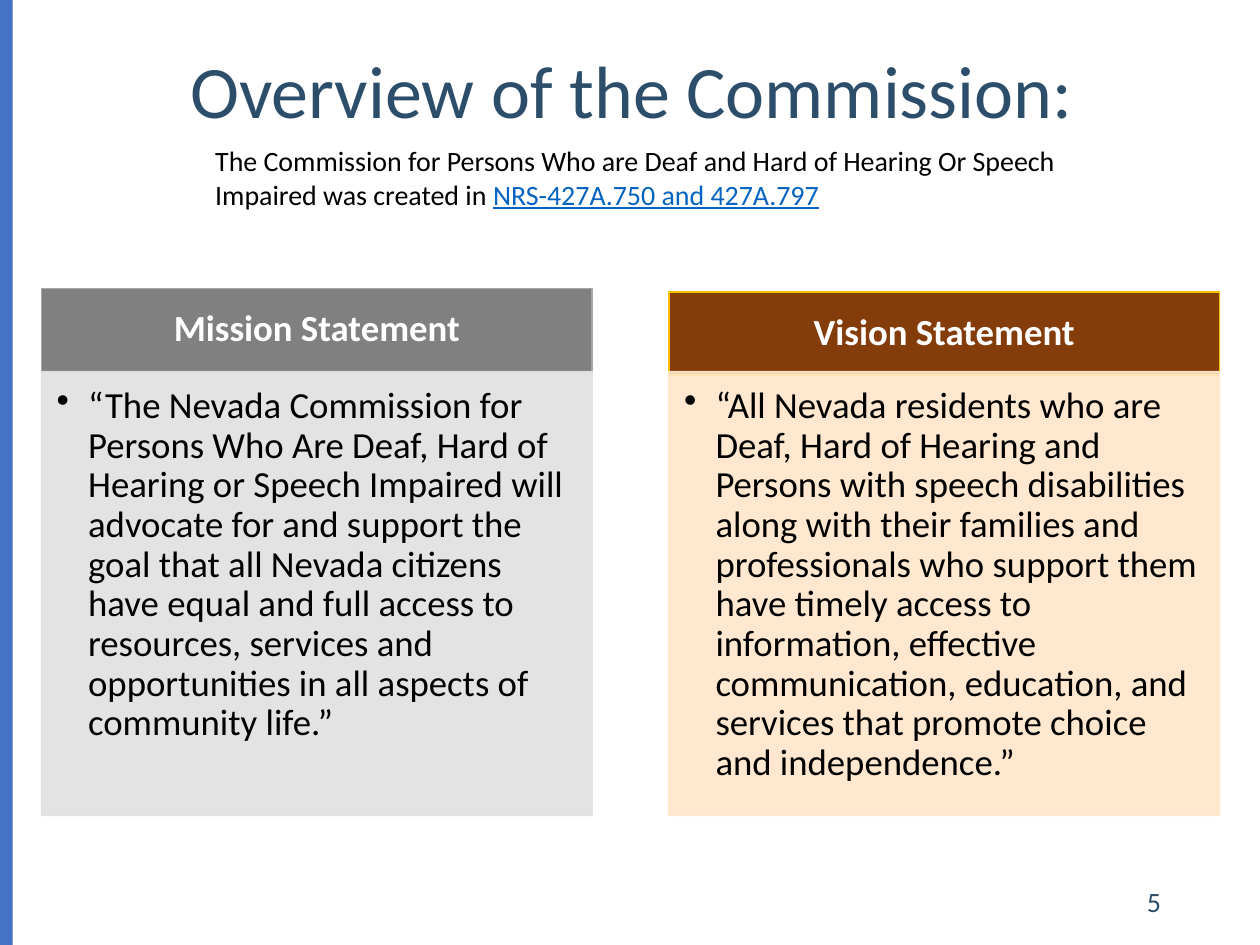
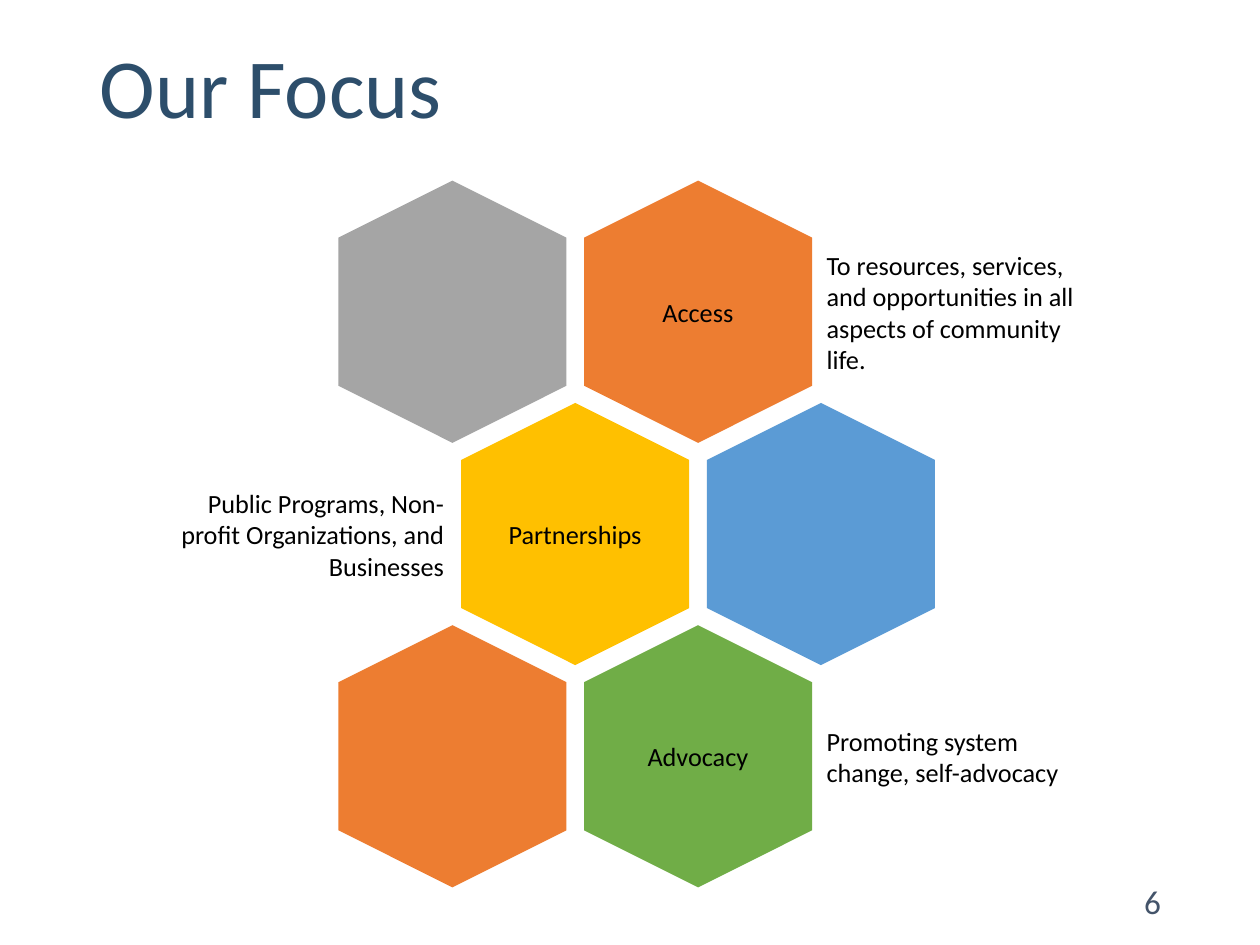
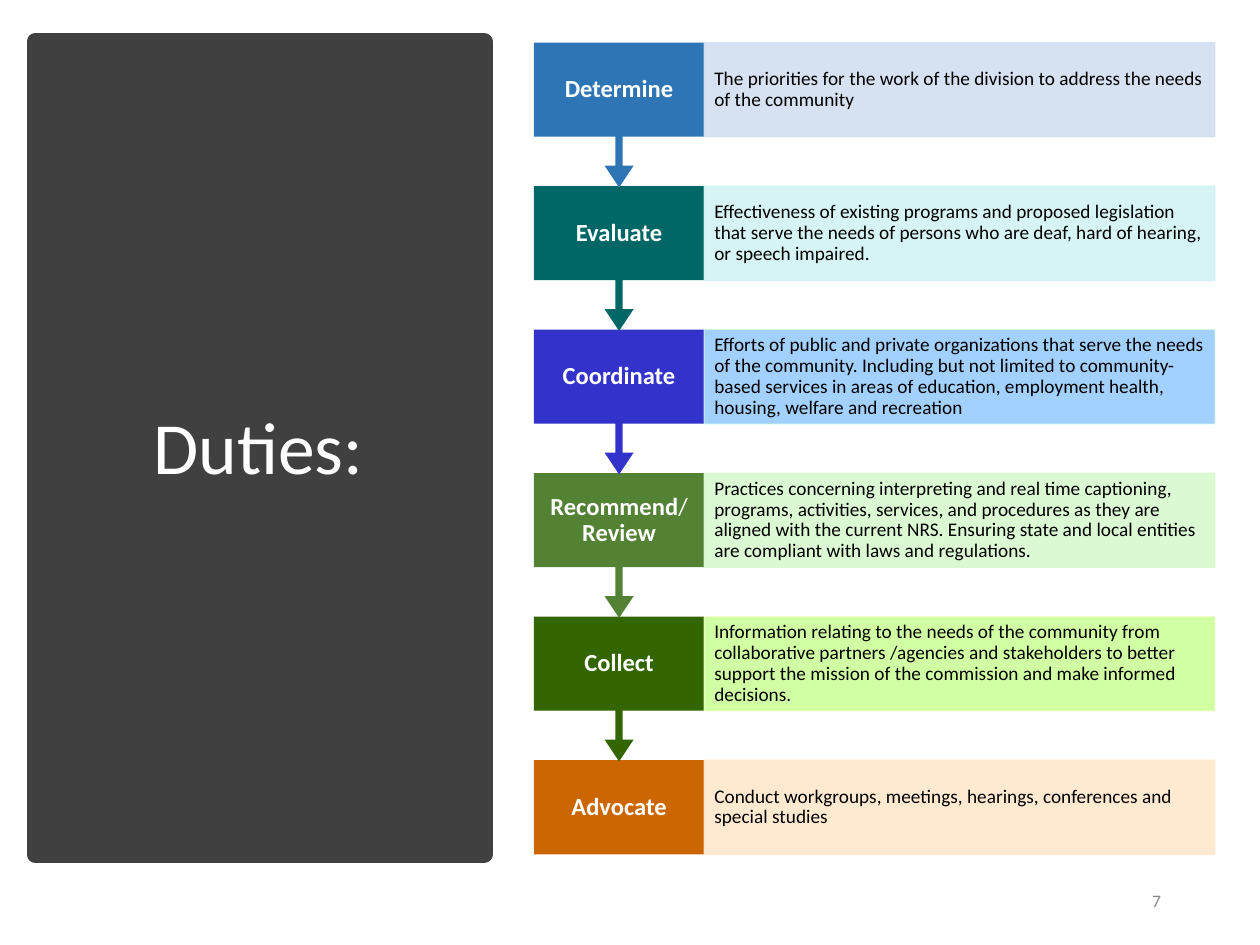
from dataclasses import dataclass
from typing import Any, NamedTuple, Optional

import lxml.etree
import pptx
import pptx.dml.color
import pptx.enum.shapes
import pptx.enum.text
import pptx.oxml.ns
import pptx.util

Pt = pptx.util.Pt
qn = pptx.oxml.ns.qn
SHAPES = pptx.enum.shapes.MSO_SHAPE
ALIGN = pptx.enum.text.PP_ALIGN
ANCHOR = pptx.enum.text.MSO_ANCHOR

FONT = "Calibri"
COLORS = {
    "navy": "2D4E6B", "slate": "44546A", "pale_slate": "898989", "link": "0563C1",
    "black": "000000", "white": "FFFFFF", "band": "4472C4", "panel": "404040",
    "mission": "808080", "mission_edge": "A5A5A5", "mission_body": "E1E1E1",
    "vision": "843C0B", "vision_edge": "FFC000", "vision_body": "FFE6CA",
    "orange": "ED7D31", "gray": "A5A5A5", "gold": "FFC000", "sky": "5B9BD5", "green": "70AD47",
    "determine": "2E75B6", "determine_body": "D2DFF0",
    "evaluate": "006666", "evaluate_body": "D1F3F2",
    "coordinate": "3333CC", "coordinate_body": "99CCFF", "coordinate_edge": "CFF6DE",
    "recommend": "548235", "recommend_body": "D8F9CE",
    "collect": "336600", "collect_body": "CCFF99", "collect_edge": "F5FCCD",
    "advocate": "CC6600", "advocate_body": "FFE8CC",
}


class Box(NamedTuple):
    left: float
    top: float
    width: float
    height: float


class Span(NamedTuple):
    text: str
    font: dict[str, Any] = {}


@dataclass(frozen=True)
class TextStyle:
    size: float
    color: str = "black"
    bold: bool = False
    align: Any = ALIGN.LEFT
    anchor: Any = ANCHOR.MIDDLE
    spacing: float = 1.0
    insets: tuple[float, float, float, float] = (7.2, 3.6, 7.2, 3.6)
    bullet_indent: float = 0


@dataclass(frozen=True)
class Statement:
    heading: str
    body: str
    left: float
    top: float
    color: str


@dataclass(frozen=True)
class Hexagon:
    row: int
    column: int
    color: str
    label: str = ""
    detail: str = ""


@dataclass(frozen=True)
class Duty:
    label: list[Span]
    body: str
    color: str
    edge: str = ""


PAGE_NUMBER_BOX = Box(508.5, 500.4, 162, 28.8)
STATEMENT_WIDTH, STATEMENT_HEAD, STATEMENT_BODY = 314.6, 47.5, 253.5
STATEMENT_BODY_TOP = 212.4
STATEMENT_HEAD_STYLE = TextStyle(21, "white", True, ALIGN.CENTER, spacing=0.9,
                                 insets=(11.5, 6.5, 11.5, 6.5))
STATEMENT_BODY_STYLE = TextStyle(21, anchor=ANCHOR.TOP, spacing=0.9,
                                 insets=(8.6, 8.6, 11.5, 13), bullet_indent=18)
STATEMENTS = [
    Statement("Mission Statement",
              "“The Nevada Commission for Persons Who Are Deaf, Hard of Hearing or Speech "
              "Impaired will advocate for and support the goal that all Nevada citizens have "
              "equal and full access to resources, services and opportunities in all aspects "
              "of community life.”", 23.8, 164.9, "mission"),
    Statement("Vision Statement",
              "“All Nevada residents who are Deaf, Hard of Hearing and Persons with speech "
              "disabilities along with their families and professionals who support them have "
              "timely access to information, effective communication, education, and services "
              "that promote choice and independence.”", 382.3, 167, "vision"),
]

HEX_WIDTH, HEX_HEIGHT = 149.8, 130.3
HEX_LEFT, HEX_TOP = 183.6, 113
HEX_COLUMN_STEP, HEX_ROW_STEP = 140.4, 127
HEX_INSETS = (4.3, 4.3, 4.3, 4.3)
HEXAGONS = [
    Hexagon(0, 1, "orange", "Access",
            "To resources, services, and opportunities in all aspects of community life."),
    Hexagon(0, 0, "gray"),
    Hexagon(1, 0, "gold", "Partnerships",
            "Public Programs, Non-profit Organizations, and Businesses"),
    Hexagon(1, 1, "sky"),
    Hexagon(2, 1, "green", "Advocacy", "Promoting system change, self-advocacy"),
    Hexagon(2, 0, "orange"),
]

DUTY_LEFT, DUTY_TOP, DUTY_STEP = 305.1, 24.3, 82
DUTY_LABEL_WIDTH, DUTY_BODY_WIDTH, DUTY_HEIGHT = 97.3, 291.9, 54
DUTY_CALLOUT_HEIGHT = 82.8
DUTY_LABEL_STYLE = TextStyle(14, "white", True, ALIGN.CENTER, spacing=0.9,
                             insets=(7.2, 7.9, 7.2, 7.9))
DUTY_BODY_STYLE = TextStyle(11, spacing=0.9, insets=(5.8, 10.8, 5.8, 10.8))
DUTIES = [
    Duty([Span("Determine")],
         "The priorities for the work of the division to address the needs of the community",
         "determine"),
    Duty([Span("Evaluate")],
         "Effectiveness of existing programs and proposed legislation that serve the needs of "
         "persons who are deaf, hard of hearing, or speech impaired.", "evaluate"),
    Duty([Span("Coordinate")],
         "Efforts of public and private organizations that serve the needs of the community. "
         "Including but not limited to community-based services in areas of education, "
         "employment health, housing, welfare and recreation", "coordinate", "coordinate_edge"),
    Duty([Span("Recommend"), Span("/ ", {"bold": False}), Span("Review")],
         "Practices concerning interpreting and real time captioning, programs, activities, "
         "services, and procedures as they are aligned with the current NRS. Ensuring state and "
         "local entities are compliant with laws and regulations.", "recommend"),
    Duty([Span("Collect")],
         "Information relating to the needs of the community from collaborative partners "
         "/agencies and stakeholders to better support the mission of the commission and make "
         "informed decisions.", "collect", "collect_edge"),
    Duty([Span("Advocate")],
         "Conduct workgroups, meetings, hearings, conferences and special studies", "advocate"),
]


def rgb(name: str) -> pptx.dml.color.RGBColor:
    return pptx.dml.color.RGBColor.from_string(COLORS[name])


def set_values(target: Any, values: dict[str, Any]) -> None:
    for name, value in values.items():
        setattr(target, name, value)


def in_points(box: Box) -> list[pptx.util.Length]:
    return [Pt(length) for length in box]


def write(shape: Any, spans: list[Span], style: TextStyle) -> None:
    """Fill a shape with one styled paragraph."""
    frame = shape.text_frame
    left, top, right, bottom = (Pt(inset) for inset in style.insets)
    set_values(frame, {
        "word_wrap": True, "auto_size": pptx.enum.text.MSO_AUTO_SIZE.NONE,
        "vertical_anchor": style.anchor, "margin_left": left, "margin_top": top,
        "margin_right": right, "margin_bottom": bottom,
    })
    para = frame.paragraphs[0]
    if style.bullet_indent:
        properties = para._p.get_or_add_pPr()
        indent = Pt(style.bullet_indent)
        properties.set("marL", str(indent))
        properties.set("indent", str(-indent))
        lxml.etree.SubElement(properties, qn("a:buChar"), char="•")
    set_values(para, {"alignment": style.align, "line_spacing": style.spacing})
    for span in spans:
        run = para.add_run()
        run.text = span.text
        values = {"name": FONT, "size": Pt(style.size), "bold": style.bold,
                  "color": style.color} | span.font
        run.font.color.rgb = rgb(values.pop("color"))
        set_values(run.font, values)


def add_text(page: Any, box: Box, spans: list[Span], style: TextStyle) -> None:
    write(page.shapes.add_textbox(*in_points(box)), spans, style)


def add_block(page: Any, kind: Any, box: Box, fill: str, edge: Optional[str] = None,
              edge_width: float = 1, opacity: int = 100, rotation: float = 0) -> Any:
    block = page.shapes.add_shape(kind, *in_points(box))
    block.shadow.inherit = False
    block.rotation = rotation
    block.fill.solid()
    block.fill.fore_color.rgb = rgb(fill)
    if edge:
        block.line.color.rgb = rgb(edge)
        block.line.width = Pt(edge_width)
    else:
        block.line.fill.background()
    if opacity < 100:
        for color in block.element.spPr.iter(qn("a:srgbClr")):
            lxml.etree.SubElement(color, qn("a:alpha"), val=str(opacity * 1000))
    return block


def add_title(page: Any, box: Box, text: str, style: TextStyle) -> None:
    title = page.shapes.title
    set_values(title, dict(zip(("left", "top", "width", "height"), in_points(box))))
    write(title, [Span(text)], style)


def add_page_number(page: Any, number: int, size: float, color: str) -> None:
    add_text(page, PAGE_NUMBER_BOX, [Span(str(number))],
             TextStyle(size, color, align=ALIGN.RIGHT))


def add_statement(page: Any, statement: Statement) -> None:
    color = statement.color
    head = add_block(page, SHAPES.RECTANGLE,
                     Box(statement.left, statement.top, STATEMENT_WIDTH, STATEMENT_HEAD),
                     color, f"{color}_edge")
    write(head, [Span(statement.heading)], STATEMENT_HEAD_STYLE)
    body = add_block(page, SHAPES.RECTANGLE,
                     Box(statement.left, STATEMENT_BODY_TOP, STATEMENT_WIDTH, STATEMENT_BODY),
                     f"{color}_body", f"{color}_body", opacity=90)
    write(body, [Span(statement.body)], STATEMENT_BODY_STYLE)


def add_hexagon(page: Any, hexagon: Hexagon) -> None:
    """Draw one honeycomb cell; odd rows are shifted and have their detail on the left."""
    shifted = hexagon.row % 2 == 1
    left = HEX_LEFT + HEX_COLUMN_STEP * (hexagon.column + shifted / 2)
    top = HEX_TOP + HEX_ROW_STEP * hexagon.row
    add_block(page, SHAPES.HEXAGON, Box(left, top, HEX_WIDTH, HEX_HEIGHT),
              hexagon.color, rotation=90)
    if hexagon.label:
        add_text(page, Box(left + 30.2, top + 13.7, 89.3, 103), [Span(hexagon.label)],
                 TextStyle(15, align=ALIGN.CENTER, insets=HEX_INSETS))
    if hexagon.detail:
        offset, width = (-157, 161.3) if shifted else (144, 167)
        align = ALIGN.RIGHT if shifted else ALIGN.LEFT
        add_text(page, Box(left + offset, top + 20.2, width, 90), [Span(hexagon.detail)],
                 TextStyle(15, align=align, insets=HEX_INSETS))


def add_duty(page: Any, index: int, duty: Duty) -> None:
    top = DUTY_TOP + DUTY_STEP * index
    label_box = Box(DUTY_LEFT, top, DUTY_LABEL_WIDTH, DUTY_HEIGHT)
    if index == len(DUTIES) - 1:
        add_block(page, SHAPES.RECTANGLE, label_box, duty.color)
    else:
        callout = add_block(page, SHAPES.UP_ARROW_CALLOUT,
                            label_box._replace(height=DUTY_CALLOUT_HEIGHT),
                            duty.color, rotation=180)
        for position, value in enumerate((0.05, 0.1, 0.15, 0.65)):
            callout.adjustments[position] = value
    add_text(page, label_box, duty.label, DUTY_LABEL_STYLE)
    fill = f"{duty.color}_body"
    body = add_block(page, SHAPES.RECTANGLE,
                     Box(DUTY_LEFT + DUTY_LABEL_WIDTH, top, DUTY_BODY_WIDTH, DUTY_HEIGHT),
                     fill, duty.edge or fill, 0.5, 90)
    write(body, [Span(duty.body)], DUTY_BODY_STYLE)


def build_overview(page: Any) -> None:
    add_title(page, Box(23.8, 25.2, 673.9, 104.4), "Overview of the Commission:",
              TextStyle(42.3, "navy", align=ALIGN.CENTER, anchor=ANCHOR.TOP, spacing=0.9,
                        insets=(7.2, 5.8, 7.2, 3.6)))
    add_block(page, SHAPES.RECTANGLE, Box(0, 0, 7.2, 540), "band")
    add_page_number(page, 5, 16, "navy")
    for statement in STATEMENTS:
        add_statement(page, statement)
    add_text(page, Box(115.9, 78.5, 502.6, 46), [
        Span("The Commission for Persons Who are Deaf and Hard of Hearing Or Speech Impaired "
             "was created in "),
        Span("NRS-427A.750 and 427A.797", {"color": "link", "underline": True}),
    ], TextStyle(16, anchor=ANCHOR.TOP))


def build_focus(page: Any) -> None:
    add_title(page, Box(49.7, 0, 620.6, 104.4), "Our Focus",
              TextStyle(48, "navy", spacing=0.9))
    add_page_number(page, 6, 19, "slate")
    for hexagon in HEXAGONS:
        add_hexagon(page, hexagon)


def build_duties(page: Any) -> None:
    panel = add_block(page, SHAPES.RECTANGLE, Box(20.2, 23.8, 256.3, 464.4),
                      "panel", "panel", 10)
    page.shapes.title.element.addprevious(panel.element)
    add_title(page, Box(35.3, 50.4, 224.6, 414), "Duties:",
              TextStyle(42, "white", align=ALIGN.CENTER, spacing=0.9))
    add_page_number(page, 7, 10, "pale_slate")
    # Last duty first, so that each arrow tip lies over the next box.
    for index, duty in reversed(list(enumerate(DUTIES))):
        add_duty(page, index, duty)


def main() -> None:
    deck = pptx.Presentation()
    deck.slide_width, deck.slide_height = Pt(720), Pt(540)
    title_only = deck.slide_layouts.get_by_name("Title Only")
    for build in (build_overview, build_focus, build_duties):
        build(deck.slides.add_slide(title_only))
    deck.save("out.pptx")


if __name__ == "__main__":
    main()
